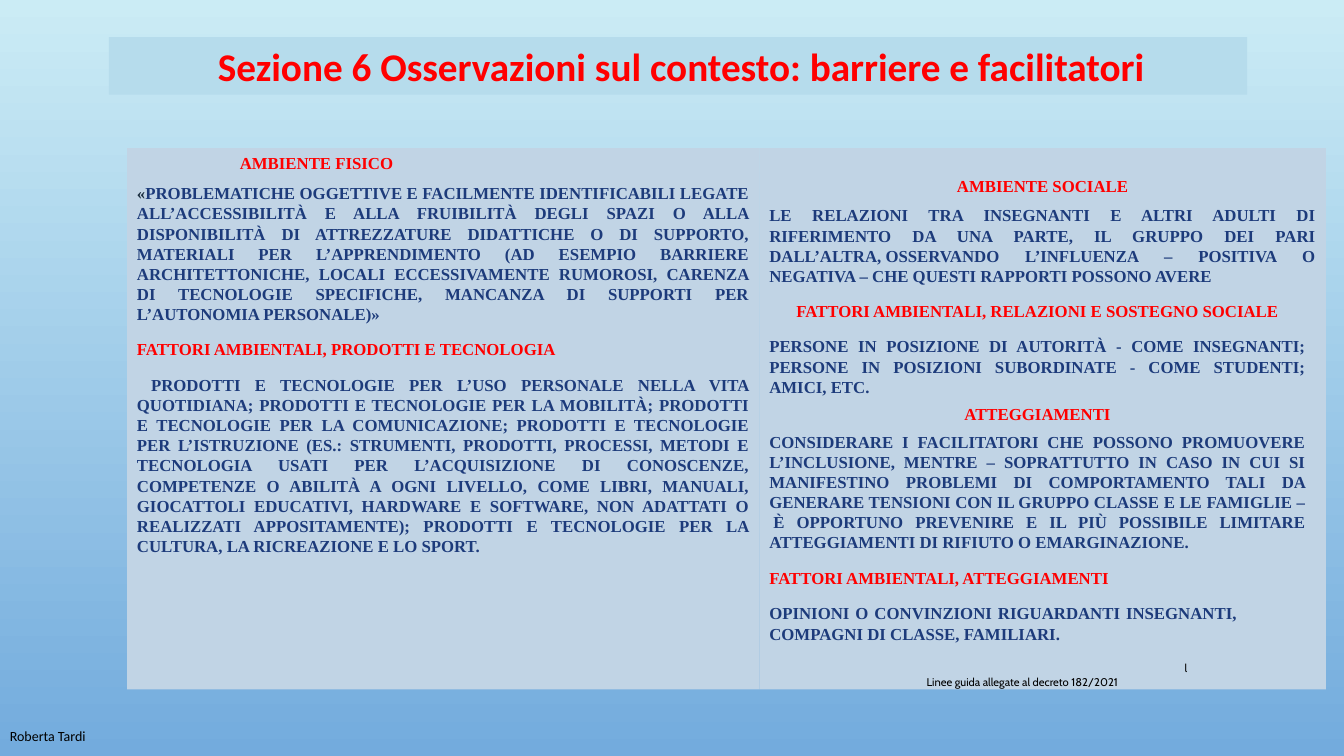
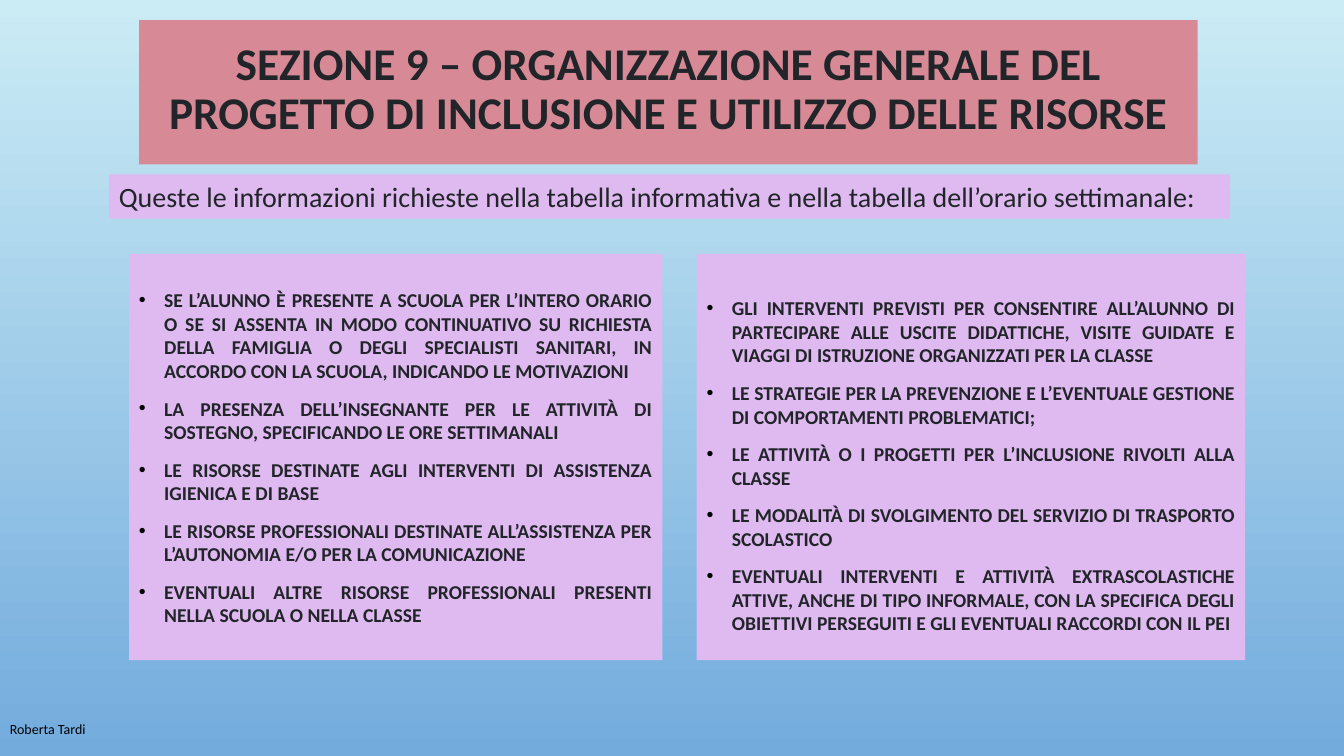
from dataclasses import dataclass

from lxml import etree
from pptx import Presentation
from pptx.dml.color import RGBColor
from pptx.enum.shapes import MSO_SHAPE as Preset
from pptx.enum.text import MSO_ANCHOR as Anchor, PP_ALIGN as Align
from pptx.oxml.ns import qn
from pptx.util import Inches, Pt

WIDTH, HEIGHT = 13.33, 7.5
AUTHOR = "Roberta Tardi"
NO_BREAK = chr(160)


@dataclass(frozen=True)
class Theme:
    sky_top: str = "CBECF5"
    sky_bottom: str = "73ABDD"
    band: str = "B6DCEC"
    table: str = "C1D4E5"
    rose: str = "D78A95"
    lilac: str = "DFBAF0"
    red: str = "FF0000"
    navy: str = "1D3B7B"
    quote: str = "1B2E40"
    ink: str = "212529"
    black: str = "000000"
    sans: str = "Calibri"
    serif: str = "Times New Roman"
    note: str = "Cabin"


THEME = Theme()


def text_style(font, size, color, bold=False, align=Align.LEFT, spacing=1.0):
    return {"font": {"name": font, "size": Pt(size), "bold": bold},
            "color": color,
            "paragraph": {"alignment": align, "line_spacing": spacing}}


STYLES = {
    "title": text_style(THEME.sans, 28, THEME.red, True, Align.CENTER),
    "banner": text_style(THEME.sans, 32.4, THEME.ink, True, Align.CENTER, 0.9),
    "subtitle": text_style(THEME.sans, 20, THEME.ink),
    "heading": text_style(THEME.serif, 12, THEME.red, True),
    "centred": text_style(THEME.serif, 12, THEME.red, True, Align.CENTER),
    "body": text_style(THEME.serif, 12, THEME.navy, True, Align.JUSTIFY),
    "bullet": text_style(THEME.sans, 14, THEME.ink, True, Align.JUSTIFY),
    "note": text_style(THEME.note, 8, THEME.black),
    "footer": text_style(THEME.sans, 10, THEME.black),
}


@dataclass(frozen=True)
class Box:
    """An area on a grid of 100 columns and 100 rows over the slide."""
    left: float
    top: float
    width: float
    height: float

    def emu(self):
        return (Inches(self.left * WIDTH / 100), Inches(self.top * HEIGHT / 100),
                Inches(self.width * WIDTH / 100), Inches(self.height * HEIGHT / 100))

    def split(self, percent, gap=0):
        """Two boxes side by side; the first takes percent of the free width."""
        first = (self.width - gap) * percent / 100
        return (Box(self.left, self.top, first, self.height),
                Box(self.left + first + gap, self.top,
                    self.width - gap - first, self.height))


@dataclass(frozen=True)
class Line:
    """A paragraph; before is in points, the indents are in inches."""
    text: str
    style: str
    before: float = 0
    left: float = 0
    first: float = 0
    right: float = 0
    opening: str = ""


def add_run(paragraph, text, style, color):
    run = paragraph.add_run()
    run.text = text
    for name, value in style["font"].items():
        setattr(run.font, name, value)
    run.font.color.rgb = RGBColor.from_string(color)


def fill_paragraph(paragraph, line):
    style = STYLES[line.style]
    properties = paragraph._p.get_or_add_pPr()
    indents = {"marL": line.left, "indent": line.first, "marR": line.right}
    for name, value in indents.items():
        properties.set(name, str(Inches(value)))
    if line.style == "bullet":
        bullet_color = etree.SubElement(properties, qn("a:buClr"))
        etree.SubElement(bullet_color, qn("a:srgbClr"), val=THEME.black)
        etree.SubElement(properties, qn("a:buFont"), typeface="Arial")
        etree.SubElement(properties, qn("a:buChar"), char="•")
    formats = {**style["paragraph"], "space_before": Pt(line.before)}
    for name, value in formats.items():
        setattr(paragraph, name, value)
    if line.opening:
        add_run(paragraph, line.opening, style, THEME.quote)
    add_run(paragraph, line.text, style, style["color"])


def add_panel(slide, box, lines, fill=None, anchor=Anchor.MIDDLE, inset=0.05):
    """Place text in a box; inset is the space above it in inches."""
    if fill:
        shape = slide.shapes.add_shape(Preset.RECTANGLE, *box.emu())
        shape.shadow.inherit = False
        shape.fill.solid()
        shape.fill.fore_color.rgb = RGBColor.from_string(fill)
        shape.line.fill.background()
    else:
        shape = slide.shapes.add_textbox(*box.emu())
    frame = shape.text_frame
    formats = {"word_wrap": True, "vertical_anchor": anchor,
               "margin_top": Inches(inset)}
    for name, value in formats.items():
        setattr(frame, name, value)
    for index, line in enumerate(lines):
        paragraph = frame.add_paragraph() if index else frame.paragraphs[0]
        fill_paragraph(paragraph, line)


def add_columns(slide, boxes, columns, fill, insets):
    for box, lines, inset in zip(boxes, columns, insets):
        add_panel(slide, box, lines, fill, Anchor.TOP, inset)


def add_footer(slide, top):
    add_panel(slide, Box(0, top, 8.4, 5.33), [Line(AUTHOR, "footer")])


def set_background(master):
    fill = master.background.fill
    fill.gradient()
    fill.gradient_angle = 270
    for stop, color in zip(fill.gradient_stops, (THEME.sky_top, THEME.sky_bottom)):
        stop.color.rgb = RGBColor.from_string(color)


def bullets(*texts):
    return [Line(text, "bullet", 10 if index else 0, 0.25, -0.25)
            for index, text in enumerate(texts)]


PHYSICAL = [
    Line("AMBIENTE FISICO", "heading", left=1.02),
    Line("PROBLEMATICHE OGGETTIVE E FACILMENTE IDENTIFICABILI LEGATE "
         "ALL’ACCESSIBILITÀ E ALLA FRUIBILITÀ DEGLI SPAZI O ALLA DISPONIBILITÀ DI "
         "ATTREZZATURE DIDATTICHE O DI SUPPORTO, MATERIALI PER L’APPRENDIMENTO "
         "(AD ESEMPIO BARRIERE ARCHITETTONICHE, LOCALI ECCESSIVAMENTE RUMOROSI, "
         "CARENZA DI TECNOLOGIE SPECIFICHE, MANCANZA DI SUPPORTI PER L’AUTONOMIA "
         "PERSONALE)»", "body", 6.9, opening="«"),
    Line("FATTORI AMBIENTALI, PRODOTTI E TECNOLOGIA", "heading", 10.8),
    Line("PRODOTTI E TECNOLOGIE PER L’USO PERSONALE NELLA VITA QUOTIDIANA; PRODOTTI "
         "E TECNOLOGIE PER LA MOBILITÀ; PRODOTTI E TECNOLOGIE PER LA COMUNICAZIONE; "
         "PRODOTTI E TECNOLOGIE PER L’ISTRUZIONE (ES.: STRUMENTI, PRODOTTI, "
         "PROCESSI, METODI E TECNOLOGIA USATI PER L’ACQUISIZIONE DI CONOSCENZE, "
         "COMPETENZE O ABILITÀ A OGNI LIVELLO, COME LIBRI, MANUALI, GIOCATTOLI "
         "EDUCATIVI, HARDWARE E SOFTWARE, NON ADATTATI O REALIZZATI "
         "APPOSITAMENTE); PRODOTTI E TECNOLOGIE PER LA CULTURA, LA RICREAZIONE E "
         "LO SPORT.", "body", 10.8, first=0.14),
]

SOCIAL = [
    Line("AMBIENTE SOCIALE", "centred"),
    Line("LE RELAZIONI TRA INSEGNANTI E ALTRI ADULTI DI RIFERIMENTO DA UNA PARTE, "
         f"IL GRUPPO DEI PARI DALL’ALTRA,{NO_BREAK}OSSERVANDO L’INFLUENZA – "
         "POSITIVA O NEGATIVA – CHE QUESTI RAPPORTI POSSONO AVERE", "body", 6.9),
    Line("FATTORI AMBIENTALI, RELAZIONI E SOSTEGNO SOCIALE", "centred", 10.8,
         right=0.1),
    Line("PERSONE IN POSIZIONE DI AUTORITÀ - COME INSEGNANTI; PERSONE IN POSIZIONI "
         "SUBORDINATE - COME STUDENTI; AMICI, ETC.", "body", 10.8, right=0.1),
    Line("ATTEGGIAMENTI", "centred", 5.2, right=0.1),
    Line("CONSIDERARE I FACILITATORI CHE POSSONO PROMUOVERE L’INCLUSIONE, MENTRE – "
         "SOPRATTUTTO IN CASO IN CUI SI MANIFESTINO PROBLEMI DI COMPORTAMENTO TALI "
         "DA GENERARE TENSIONI CON IL GRUPPO CLASSE E LE FAMIGLIE "
         f"–{NO_BREAK}È OPPORTUNO PREVENIRE E IL PIÙ POSSIBILE LIMITARE "
         "ATTEGGIAMENTI DI RIFIUTO O EMARGINAZIONE.", "body", 5.2, right=0.1),
    Line("FATTORI AMBIENTALI, ATTEGGIAMENTI", "heading", 10.9),
    Line("OPINIONI O CONVINZIONI RIGUARDANTI INSEGNANTI, COMPAGNI DI CLASSE, "
         "FAMILIARI.", "body", 10.9, right=0.78),
    Line("l", "note", 12.8, left=4.12),
    Line("Linee guida allegate al decreto 182/2021", "note", 0.5, left=1.56),
]

RESOURCES = bullets(
    "SE L’ALUNNO È PRESENTE A SCUOLA PER L’INTERO ORARIO O SE SI ASSENTA IN MODO "
    "CONTINUATIVO SU RICHIESTA DELLA FAMIGLIA O DEGLI SPECIALISTI SANITARI, IN "
    "ACCORDO CON LA SCUOLA, INDICANDO LE MOTIVAZIONI",
    "LA PRESENZA DELL’INSEGNANTE PER LE ATTIVITÀ DI SOSTEGNO, SPECIFICANDO LE ORE "
    "SETTIMANALI",
    "LE RISORSE DESTINATE AGLI INTERVENTI DI ASSISTENZA IGIENICA E DI BASE",
    "LE RISORSE PROFESSIONALI DESTINATE ALL’ASSISTENZA PER L’AUTONOMIA E/O PER LA "
    "COMUNICAZIONE",
    "EVENTUALI ALTRE RISORSE PROFESSIONALI PRESENTI NELLA SCUOLA O NELLA CLASSE",
)

ACTIVITIES = bullets(
    "GLI INTERVENTI PREVISTI PER CONSENTIRE ALL’ALUNNO DI PARTECIPARE ALLE USCITE "
    "DIDATTICHE, VISITE GUIDATE E VIAGGI DI ISTRUZIONE ORGANIZZATI PER LA CLASSE",
    "LE STRATEGIE PER LA PREVENZIONE E L’EVENTUALE GESTIONE DI COMPORTAMENTI "
    "PROBLEMATICI;",
    "LE ATTIVITÀ O I PROGETTI PER L’INCLUSIONE RIVOLTI ALLA CLASSE",
    "LE MODALITÀ DI SVOLGIMENTO DEL SERVIZIO DI TRASPORTO SCOLASTICO",
    "EVENTUALI INTERVENTI E ATTIVITÀ EXTRASCOLASTICHE ATTIVE, ANCHE DI TIPO "
    "INFORMALE, CON LA SPECIFICA DEGLI OBIETTIVI PERSEGUITI E GLI EVENTUALI "
    "RACCORDI CON IL PEI",
)


def build_context_slide(slide):
    boxes = Box(9.45, 19.6, 89.2, 71.6).split(52.75)
    add_columns(slide, boxes, (PHYSICAL, SOCIAL), THEME.table, (0.05, 0.27))
    title = "Sezione 6 Osservazioni sul contesto: barriere e facilitatori"
    add_panel(slide, Box(8.1, 4.93, 84.7, 7.6), [Line(title, "title", left=0.06)],
              THEME.band)
    add_footer(slide, 94.67)


def build_organisation_slide(slide):
    title = ("SEZIONE 9 – ORGANIZZAZIONE GENERALE DEL PROGETTO DI INCLUSIONE "
             "E UTILIZZO DELLE RISORSE")
    add_panel(slide, Box(10.35, 2.67, 78.77, 19.07), [Line(title, "banner")],
              THEME.rose, inset=0)
    subtitle = ("Queste le informazioni richieste nella tabella informativa "
                "e nella tabella dell’orario settimanale:")
    add_panel(slide, Box(8.1, 23.07, 83.42, 5.87), [Line(subtitle, "subtitle")],
              THEME.lilac)
    boxes = Box(9.6, 33.6, 83.05, 53.73).split(49.3, gap=2.55)
    add_columns(slide, boxes, (RESOURCES, ACTIVITIES), THEME.lilac, (0.34, 0.42))
    add_footer(slide, 93.73)


def main():
    presentation = Presentation()
    presentation.slide_width = Inches(WIDTH)
    presentation.slide_height = Inches(HEIGHT)
    set_background(presentation.slide_master)
    blank = presentation.slide_layouts[6]
    for build in (build_context_slide, build_organisation_slide):
        build(presentation.slides.add_slide(blank))
    presentation.save("out.pptx")


if __name__ == "__main__":
    main()
